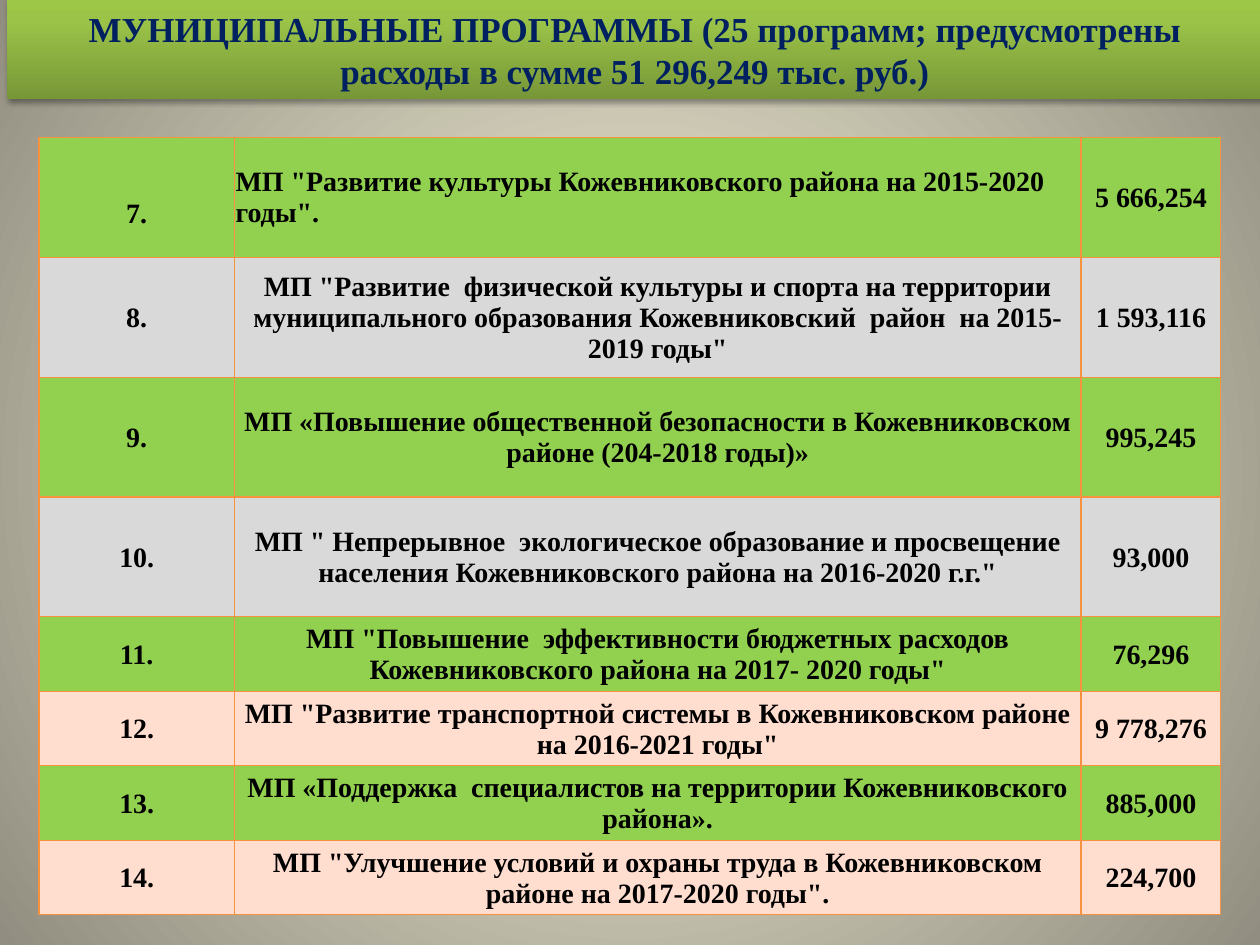
import pptx
import pptx.dml.color
import pptx.enum.shapes
import pptx.enum.text
import pptx.oxml
import pptx.oxml.ns
import pptx.util

COLORS = {
    "green": "92D050", "grey": "D9D9D9", "peach": "FFDDCF",
    "border": "F69240", "text": "000000", "title": "002060", "shadow": "000000",
    "center": "FCF7DD", "edge": "918E81",
    "banner_dark": "779737", "banner_mid": "9BC348", "banner_light": "9DC746",
}
FONT = "Times New Roman"
NS = pptx.oxml.ns.nsdecls("a")
TITLE = ("МУНИЦИПАЛЬНЫЕ ПРОГРАММЫ (25 программ; предусмотрены "
         "расходы в сумме 51 296,249 тыс. руб.)")
PROGRAMS = [
    ('МП "Развитие культуры Кожевниковского района на 2015-2020 годы".', "5 666,254", "green"),
    ('МП "Развитие  физической культуры и спорта на территории муниципального '
     'образования Кожевниковский  район  на 2015-2019 годы"', "1 593,116", "grey"),
    ("МП «Повышение общественной безопасности в Кожевниковском районе (204-2018 годы)»",
     "995,245", "green"),
    ('МП " Непрерывное  экологическое образование и просвещение населения '
     'Кожевниковского района на 2016-2020 г.г."', "93,000", "grey"),
    ('МП "Повышение  эффективности бюджетных расходов Кожевниковского района '
     'на 2017- 2020 годы"', "76,296", "green"),
    ('МП "Развитие транспортной системы в Кожевниковском районе на 2016-2021 годы"',
     "9 778,276", "peach"),
    ("МП «Поддержка  специалистов на территории Кожевниковского района».",
     "885,000", "green"),
    ('МП "Улучшение условий и охраны труда в Кожевниковском районе на 2017-2020 годы".',
     "224,700", "peach"),
]
FIRST_NUMBER = 7
TALL_ROWS = 4
COLUMN_SHARES = (1.55 / 9.38, 6.72 / 9.38, 1.11 / 9.38)
TALL_SHARE, SHORT_SHARE = 0.95 / 6.16, 0.59 / 6.16


def apply_gradient(fill, parent, stops, direction):
    fill.gradient()
    gradient = parent.find(".//" + pptx.oxml.ns.qn("a:gradFill"))
    for child in list(gradient):
        gradient.remove(child)
    marks = "".join(
        f'<a:gs pos="{share * 1000}"><a:srgbClr val="{COLORS[color]}"/></a:gs>'
        for share, color in stops)
    gradient.append(pptx.oxml.parse_xml(f"<a:gsLst {NS}>{marks}</a:gsLst>"))
    gradient.append(pptx.oxml.parse_xml(direction))


def style_text(paragraph, size, color, align=pptx.enum.text.PP_ALIGN.CENTER):
    paragraph.alignment = align
    font = paragraph.font
    font.name, font.size, font.bold = FONT, pptx.util.Pt(size), True
    font.color.rgb = pptx.dml.color.RGBColor.from_string(COLORS[color])


def paint_background(slide):
    apply_gradient(
        slide.background.fill, slide.element, [(0, "center"), (100, "edge")],
        f'<a:path {NS} path="circle">'
        '<a:fillToRect l="50000" t="50000" r="50000" b="50000"/></a:path>')


def add_banner(slide, left, top, width, height):
    banner = slide.shapes.add_shape(
        pptx.enum.shapes.MSO_SHAPE.RECTANGLE, left, top, width, height)
    banner.line.fill.background()
    banner.shadow.inherit = False
    properties = banner.element.spPr
    apply_gradient(
        banner.fill, properties,
        [(0, "banner_dark"), (80, "banner_mid"), (100, "banner_light")],
        f'<a:lin {NS} ang="16200000" scaled="0"/>')
    properties.find(pptx.oxml.ns.qn("a:effectLst")).append(pptx.oxml.parse_xml(
        f'<a:outerShdw {NS} blurRad="{pptx.util.Pt(3.1)}" dist="{pptx.util.Pt(1.8)}" '
        f'dir="5400000" rotWithShape="0"><a:srgbClr val="{COLORS["shadow"]}">'
        '<a:alpha val="35000"/></a:srgbClr></a:outerShdw>'))
    frame = banner.text_frame
    frame.word_wrap = True
    frame.vertical_anchor = pptx.enum.text.MSO_ANCHOR.MIDDLE
    frame.text = TITLE
    style_text(frame.paragraphs[0], 20, "title")


def style_cell(cell, color):
    cell.margin_left = cell.margin_right = cell.margin_top = pptx.util.Inches(0.01)
    cell.margin_bottom = 0
    cell.vertical_anchor = pptx.enum.text.MSO_ANCHOR.MIDDLE
    cell.fill.solid()
    cell.fill.fore_color.rgb = pptx.dml.color.RGBColor.from_string(COLORS[color])
    properties = cell._tc.get_or_add_tcPr()
    for position, side in enumerate(("lnL", "lnR", "lnT", "lnB")):
        properties.insert(position, pptx.oxml.parse_xml(
            f'<a:{side} {NS} w="{pptx.util.Pt(0.75)}"><a:solidFill>'
            f'<a:srgbClr val="{COLORS["border"]}"/></a:solidFill></a:{side}>'))


def add_program_table(slide, left, top, width, height):
    table = slide.shapes.add_table(
        len(PROGRAMS), len(COLUMN_SHARES), left, top, width, height).table
    table.first_row = table.horz_banding = False
    for column, share in zip(table.columns, COLUMN_SHARES):
        column.width = int(width * share)
    for index, (name, amount, color) in enumerate(PROGRAMS):
        row = table.rows[index]
        row.height = int(height * (TALL_SHARE if index < TALL_ROWS else SHORT_SHARE))
        for cell, text in zip(row.cells, (f"{FIRST_NUMBER + index}.", name, amount)):
            cell.text = text
            style_cell(cell, color)
            style_text(cell.text_frame.paragraphs[0], 16, "text")
    table.cell(0, 0).margin_top = pptx.util.Inches(0.26)
    table.cell(0, 1).text_frame.paragraphs[0].alignment = pptx.enum.text.PP_ALIGN.LEFT


def main():
    deck = pptx.Presentation()
    deck.slide_width, deck.slide_height = pptx.util.Inches(10), pptx.util.Inches(7.5)
    slide = deck.slides.add_slide(deck.slide_layouts[6])
    wide, high = deck.slide_width / 100, deck.slide_height / 100
    paint_background(slide)
    add_program_table(slide, int(3.1 * wide), int(14.53 * high),
                      int(93.8 * wide), int(82.27 * high))
    add_banner(slide, int(0.6 * wide), 0, int(99.6 * wide), int(10.53 * high))
    deck.save("out.pptx")


if __name__ == "__main__":
    main()
